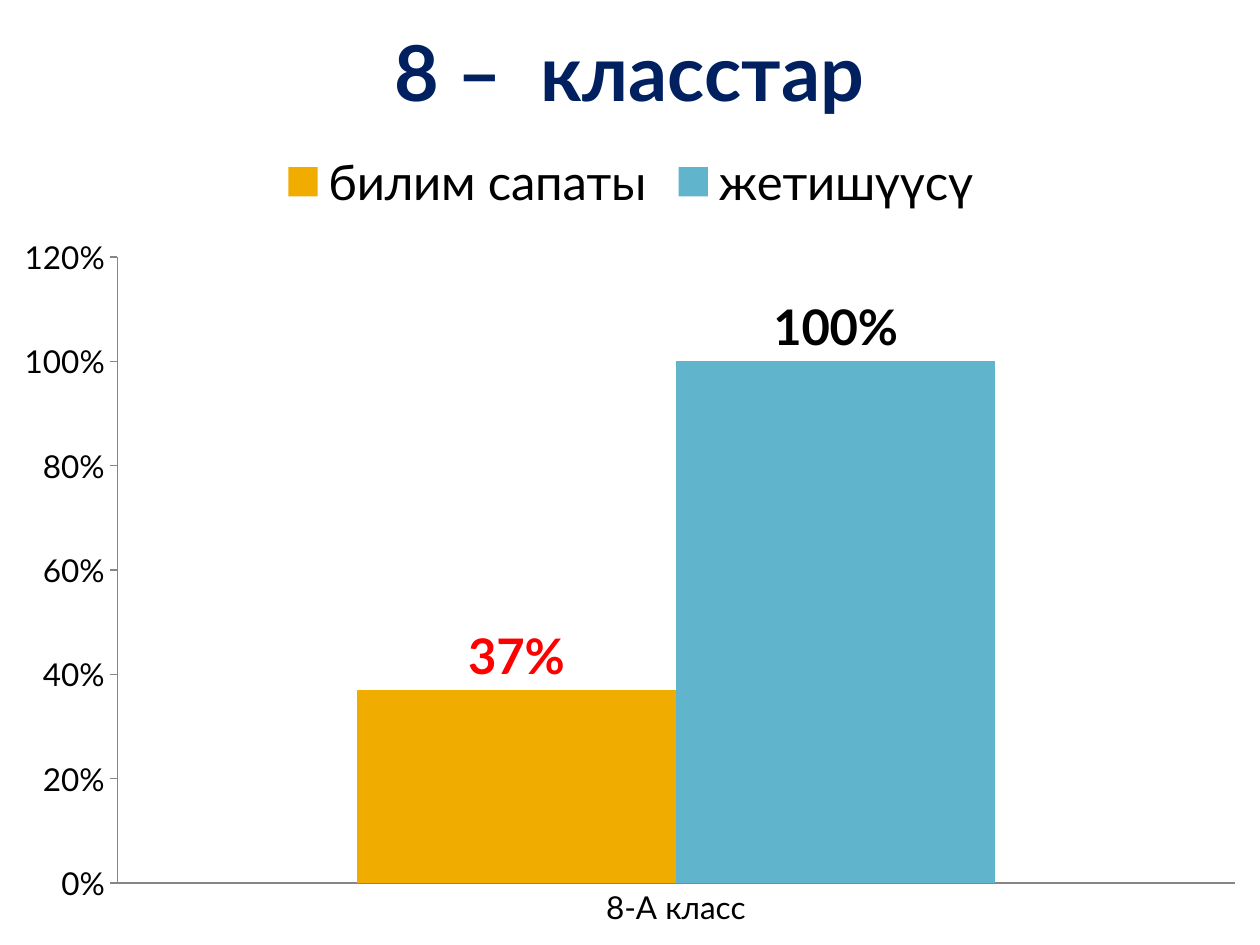
import pptx
import pptx.chart.data
import pptx.dml.color
import pptx.enum.chart
import pptx.oxml
import pptx.oxml.ns
import pptx.util

WIDTH, HEIGHT = 10, 7.5
FONT = "Lato"
AXIS_COLOR = "868686"
PERCENT = "0%"
CATEGORIES = ["8-А класс"]
SERIES = [
    ("билим сапаты", [0.37], "F0AD00", "FF0000"),
    ("жетишүүсү", [1], "60B5CC", "000000"),
]


def color(hex_string):
    return pptx.dml.color.RGBColor.from_string(hex_string)


def set_values(target, values):
    for name, value in values.items():
        setattr(target, name, value)


def style_font(font, size, hex_string="000000", bold=False):
    set_values(font, {"name": FONT, "size": pptx.util.Pt(size), "bold": bold})
    font.color.rgb = color(hex_string)


def place(element, predecessor, left, top, width=None, height=None):
    settings = {"xMode": "edge", "yMode": "edge",
                "x": left / WIDTH, "y": top / HEIGHT}
    if width:
        settings = {"layoutTarget": "inner", **settings,
                    "w": width / WIDTH, "h": height / HEIGHT}
    items = "".join(f'<c:{tag} val="{value}"/>' for tag, value in settings.items())
    namespace = pptx.oxml.ns.nsdecls("c")
    layout = pptx.oxml.parse_xml(
        f"<c:layout {namespace}><c:manualLayout>{items}</c:manualLayout></c:layout>")
    for previous in element.findall(pptx.oxml.ns.qn("c:layout")):
        element.remove(previous)
    if predecessor:
        element.find(pptx.oxml.ns.qn(predecessor)).addnext(layout)
    else:
        element.insert(0, layout)


def add_column_chart(presentation, slide):
    data = pptx.chart.data.CategoryChartData(number_format=PERCENT)
    data.categories = CATEGORIES
    for name, values, _, _ in SERIES:
        data.add_series(name, values)
    frame = slide.shapes.add_chart(
        pptx.enum.chart.XL_CHART_TYPE.COLUMN_CLUSTERED,
        0, 0, presentation.slide_width, presentation.slide_height, data)
    chart = frame.chart
    style_font(chart.font, 18)
    return chart


def style_title(chart, text):
    chart.has_title = True
    paragraph = chart.chart_title.text_frame.paragraphs[0]
    run = paragraph.add_run()
    run.text = text
    style_font(run.font, 44, "002060", True)
    chart.chart_title.include_in_layout = False
    place(chart.chart_title.element, "c:tx", 3.02, 0.02)


def style_legend(chart):
    chart.has_legend = True
    set_values(chart.legend, {
        "position": pptx.enum.chart.XL_LEGEND_POSITION.TOP,
        "include_in_layout": False,
    })
    style_font(chart.legend.font, 28)
    legend = chart.element.find(".//" + pptx.oxml.ns.qn("c:legend"))
    place(legend, "c:legendPos", 2.16, 1.13)


def style_axis(axis, tick_mark):
    set_values(axis, {
        "has_major_gridlines": False,
        "major_tick_mark": tick_mark,
        "minor_tick_mark": pptx.enum.chart.XL_TICK_MARK.NONE,
    })
    axis.format.line.color.rgb = color(AXIS_COLOR)
    axis.format.line.width = pptx.util.Pt(0.75)
    style_font(axis.tick_labels.font, 18)


def style_series(series, fill, label_color):
    series.format.fill.solid()
    series.format.fill.fore_color.rgb = color(fill)
    labels = series.data_labels
    set_values(labels, {
        "show_value": True,
        "number_format": PERCENT,
        "number_format_is_linked": False,
        "position": pptx.enum.chart.XL_LABEL_POSITION.OUTSIDE_END,
    })
    style_font(labels.font, 28, label_color, True)


def main():
    presentation = pptx.Presentation()
    set_values(presentation, {
        "slide_width": pptx.util.Inches(WIDTH),
        "slide_height": pptx.util.Inches(HEIGHT),
    })
    slide = presentation.slides.add_slide(presentation.slide_layouts[6])
    chart = add_column_chart(presentation, slide)
    style_title(chart, "8 –  класстар")
    style_legend(chart)
    plot_area = chart.element.find(".//" + pptx.oxml.ns.qn("c:plotArea"))
    place(plot_area, None, 0.93, 2.04, 8.87, 4.97)
    tick_marks = pptx.enum.chart.XL_TICK_MARK
    style_axis(chart.category_axis, tick_marks.NONE)
    style_axis(chart.value_axis, tick_marks.OUTSIDE)
    set_values(chart.value_axis, {
        "minimum_scale": 0, "maximum_scale": 1.2, "major_unit": 0.2})
    set_values(chart.value_axis.tick_labels, {
        "number_format": PERCENT, "number_format_is_linked": False})
    plot = chart.plots[0]
    set_values(plot, {"gap_width": 150, "overlap": 0, "vary_by_categories": False})
    for series, (_, _, fill, label_color) in zip(plot.series, SERIES):
        style_series(series, fill, label_color)
    presentation.save("out.pptx")


if __name__ == "__main__":
    main()
